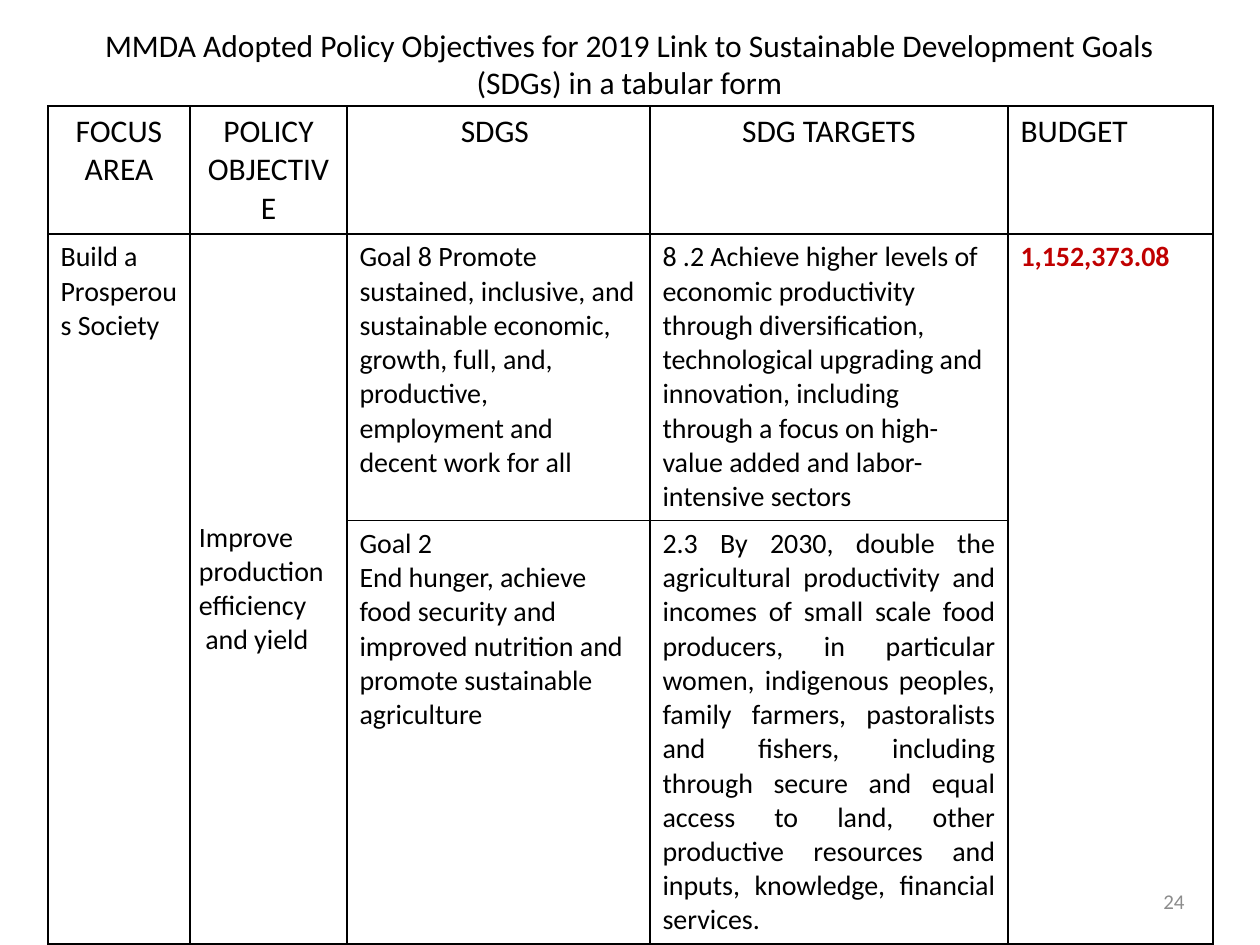
from lxml import etree
from pptx import Presentation
from pptx import util as u
from pptx.dml.color import RGBColor
from pptx.enum import text
from pptx.oxml.ns import qn

ALIGN = text.PP_ALIGN
ANCHOR = text.MSO_ANCHOR

COLUMN_WIDTHS = [142, 157, 303, 358, 205]
ROW_HEIGHTS = [128, 286, 423]
MERGED_COLUMNS = [0, 1, 4]

TITLE = ("MMDA Adopted Policy Objectives for 2019 Link to Sustainable "
         "Development Goals (SDGs) in a tabular form")
HEADERS = ["FOCUS AREA", "POLICY OBJECTIVE", "SDGS ", "SDG TARGETS", "BUDGET"]
# A vertical tab is a line break, a newline starts a paragraph.
BODY = [
    ["Build a Prosperous Society",
     "Improve production efficiency \v and yield",
     "Goal 8 Promote sustained, inclusive, and sustainable economic, growth, "
     "full, and, productive, employment and decent work for all",
     "8 .2 Achieve higher levels of economic productivity through "
     "diversification, technological upgrading and innovation, including "
     "through a focus on high-value added and labor-intensive sectors",
     "1,152,373.08"],
    [None,
     None,
     "Goal 2\nEnd hunger, achieve food security and improved nutrition and "
     "promote sustainable agriculture",
     "2.3 By 2030, double the agricultural productivity and incomes of small "
     "scale food producers, in particular women, indigenous peoples, family "
     "farmers, pastoralists and fishers, including through secure and equal "
     "access to land, other productive resources and inputs, knowledge, "
     "financial services. ",
     None],
]


def px(length):
    return u.Emu(round(length * 914400 / 126))


def color(hex_string):
    return RGBColor.from_string(hex_string)


def write(frame, content, size=16, fill="000000", bold=False, align=ALIGN.LEFT):
    frame.word_wrap = True
    frame.text = content
    for paragraph in frame.paragraphs:
        paragraph.alignment = align
        for run in paragraph.runs:
            run.font.name = "Calibri"
            run.font.size = u.Pt(size)
            run.font.bold = bold
            run.font.color.rgb = color(fill)


def add_borders(cell, line_color="000000", width=1):
    properties = cell._tc.get_or_add_tcPr()
    for side in ("lnL", "lnR", "lnT", "lnB"):
        line = etree.SubElement(properties, qn("a:" + side), w=str(u.Pt(width)))
        solid = etree.SubElement(line, qn("a:solidFill"))
        etree.SubElement(solid, qn("a:srgbClr"), val=line_color)


def add_title(slide, left, top, width, height):
    title = slide.shapes.title
    title.left, title.top, title.width, title.height = map(
        px, (left, top, width, height))
    frame = title.text_frame
    write(frame, TITLE, size=18, align=ALIGN.CENTER)
    frame.auto_size = text.MSO_AUTO_SIZE.NONE
    frame.vertical_anchor = ANCHOR.MIDDLE


def add_policy_table(slide, left, top):
    table = slide.shapes.add_table(
        len(ROW_HEIGHTS), len(COLUMN_WIDTHS), px(left), px(top),
        px(sum(COLUMN_WIDTHS)), px(sum(ROW_HEIGHTS))).table
    table.first_row = table.horz_banding = False
    for column, width in zip(table.columns, COLUMN_WIDTHS):
        column.width = px(width)
    for row, height in zip(table.rows, ROW_HEIGHTS):
        row.height = px(height)
    for cell in table.iter_cells():
        add_borders(cell)
        cell.fill.background()
    for column in MERGED_COLUMNS:
        table.cell(1, column).merge(table.cell(2, column))

    for column, header in enumerate(HEADERS):
        align = ALIGN.LEFT if header == "BUDGET" else ALIGN.CENTER
        write(table.cell(0, column).text_frame, header, size=18, align=align)
    special = {(1, 4): {"fill": "C00000", "bold": True},
               (2, 3): {"align": ALIGN.JUSTIFY}}
    for row, contents in enumerate(BODY, start=1):
        for column, content in enumerate(contents):
            if content:
                write(table.cell(row, column).text_frame, content,
                      **special.get((row, column), {}))

    objective = table.cell(1, 1)
    objective.vertical_anchor = ANCHOR.MIDDLE
    objective.margin_left = objective.margin_right = px(9)
    objective.margin_top = objective.margin_bottom = 0


def add_page_number(slide, number, left, top, width, height):
    box = slide.shapes.add_textbox(*map(px, (left, top, width, height)))
    write(box.text_frame, number, size=12, fill="8C8C8C", align=ALIGN.RIGHT)
    box.text_frame.vertical_anchor = ANCHOR.MIDDLE


def main():
    presentation = Presentation()
    presentation.slide_width, presentation.slide_height = px(1260), px(945)
    slide = presentation.slides.add_slide(presentation.slide_layouts[5])
    add_title(slide, 73, 21, 1113, 85)
    add_policy_table(slide, 48, 106)
    add_page_number(slide, "24", 903, 876, 294, 50)
    presentation.save("out.pptx")


if __name__ == "__main__":
    main()
